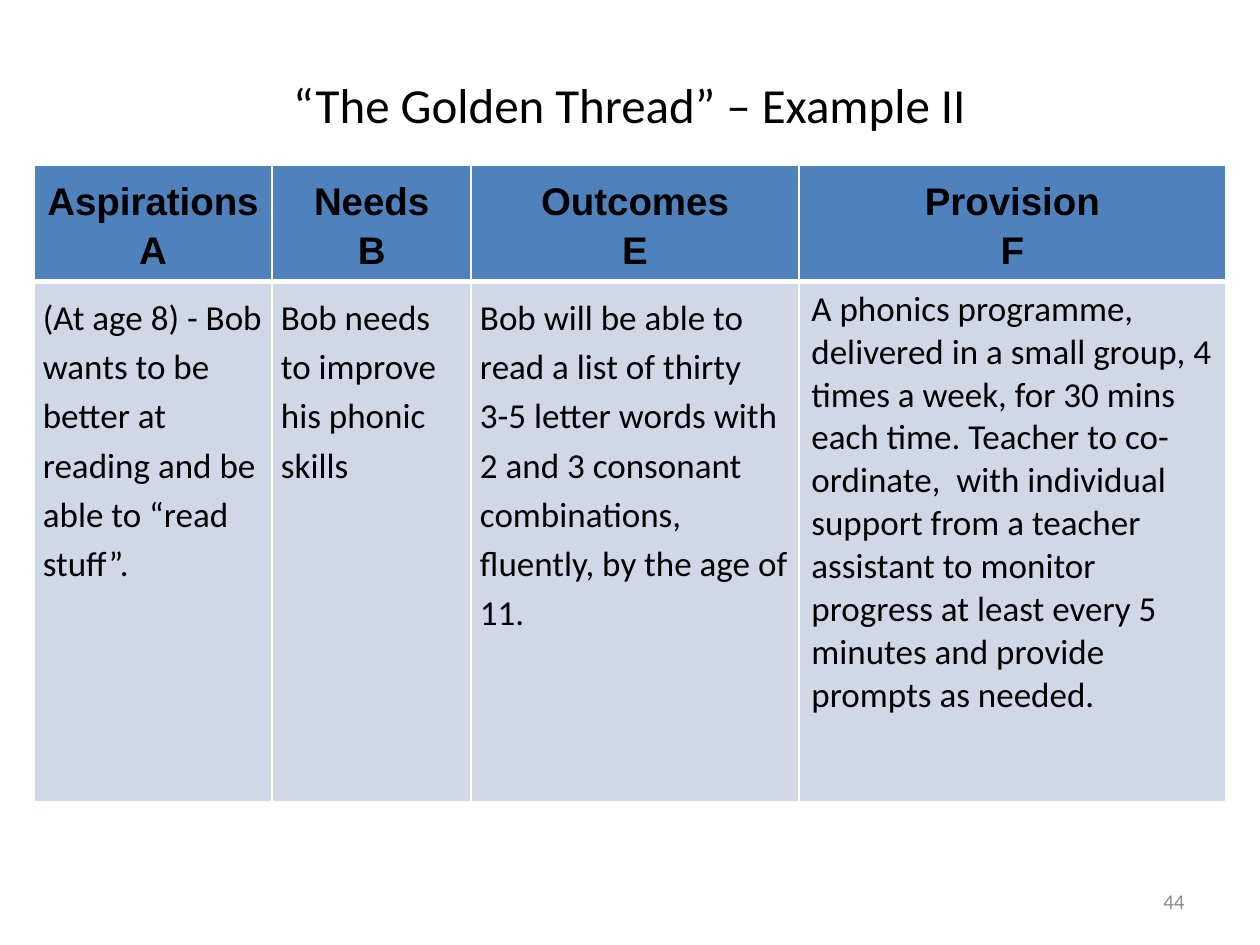
from lxml.etree import SubElement
from pptx import Presentation
from pptx.dml.color import RGBColor
from pptx.enum.text import MSO_ANCHOR as Anchor, PP_ALIGN as Align
from pptx.oxml.ns import qn
from pptx.util import Inches, Pt

WIDTH, HEIGHT = 10, 7.5
COLUMNS = [1.89, 1.58, 2.6, 3.39]
ROWS = [0.91, 4.13]
HEADINGS = ["Aspirations\nA", "Needs\nB", "Outcomes\nE", "Provision\nF"]
DETAILS = [
    "(At age 8) - Bob wants to be better at reading and be able to “read stuff”.",
    "Bob needs to improve his phonic skills",
    "Bob will be able to read a list of thirty\n"
    "3-5 letter words with 2 and 3 consonant combinations, fluently, by the age of 11.",
    "A phonics programme, delivered in a small group, 4 times a week, for 30 mins "
    "each time. Teacher to co-ordinate,  with individual support from a teacher "
    "assistant to monitor progress at least every 5 minutes and provide prompts as needed.",
]


def colour(value):
    """Turn a hex string into a colour."""
    return RGBColor.from_string(value)


def write(frame, text, size, font="Calibri", ink="000000", bold=False,
          align=Align.LEFT, spacing=1.0):
    """Fill a text frame and format every run in it."""
    frame.text = text
    frame.word_wrap = True
    for para in frame.paragraphs:
        para.alignment, para.line_spacing = align, spacing
        for span in para.runs:
            span.font.name, span.font.size, span.font.bold = font, Pt(size), bold
            span.font.color.rgb = colour(ink)


def place(shape, box):
    """Move a shape to a box given in inches."""
    shape.left, shape.top, shape.width, shape.height = map(Inches, box)


def add_borders(cell, widths):
    """Draw white lines on the left, right, top and bottom of a cell."""
    properties = cell._tc.get_or_add_tcPr()
    for side, width in zip("LRTB", widths):
        line = SubElement(properties, qn(f"a:ln{side}"), w=str(Pt(width)))
        fill = SubElement(line, qn("a:solidFill"))
        SubElement(fill, qn("a:srgbClr"), val="FFFFFF")


def style_cell(cell, fill, borders, insets):
    """Set the borders, fill and margins of a cell."""
    add_borders(cell, borders)
    cell.fill.solid()
    cell.fill.fore_color.rgb = colour(fill)
    across, down = map(Inches, insets)
    cell.margin_left = cell.margin_right = across
    cell.margin_top = cell.margin_bottom = down


def add_title(page, box):
    """Place the slide title."""
    title = page.shapes.title
    place(title, box)
    title.text_frame.vertical_anchor = Anchor.MIDDLE
    write(title.text_frame, "“The Golden Thread” – Example II", 28, align=Align.CENTER)


def add_thread_table(page, box):
    """Build the table that leads from aspirations to provision."""
    table = page.shapes.add_table(len(ROWS), len(COLUMNS), *map(Inches, box)).table
    for column, width in zip(table.columns, COLUMNS):
        column.width = Inches(width)
    for row, height in zip(table.rows, ROWS):
        row.height = Inches(height)
    for index, (heading, detail) in enumerate(zip(HEADINGS, DETAILS)):
        last = index == len(COLUMNS) - 1
        top, body = table.cell(0, index), table.cell(1, index)
        style_cell(top, "4F81BD", (1, 1, 1, 3), (0.07, 0.07))
        write(top.text_frame, heading, 22, "Arial", bold=True,
              align=Align.CENTER, spacing=1.15)
        style_cell(body, "D0D8E8", (1, 1, 3, 1), (0.1, 0.05) if last else (0.07, 0.07))
        write(body.text_frame, detail, 20, spacing=1.0 if last else 1.15)


def add_page_number(page, box):
    """Place the slide number."""
    frame = page.shapes.add_textbox(*map(Inches, box)).text_frame
    frame.vertical_anchor = Anchor.MIDDLE
    write(frame, "44", 12, ink="8C8C8C", align=Align.RIGHT)


def main():
    """Build and save the slide."""
    deck = Presentation()
    deck.slide_width, deck.slide_height = Inches(WIDTH), Inches(HEIGHT)
    page = deck.slides.add_slide(deck.slide_layouts[5])
    add_title(page, (0.58, 0.21, 8.83, 1.23))
    add_thread_table(page, (0.27, 1.31, sum(COLUMNS), sum(ROWS)))
    add_page_number(page, (7.17, 6.95, 2.33, 0.4))
    deck.save("out.pptx")


if __name__ == "__main__":
    main()
